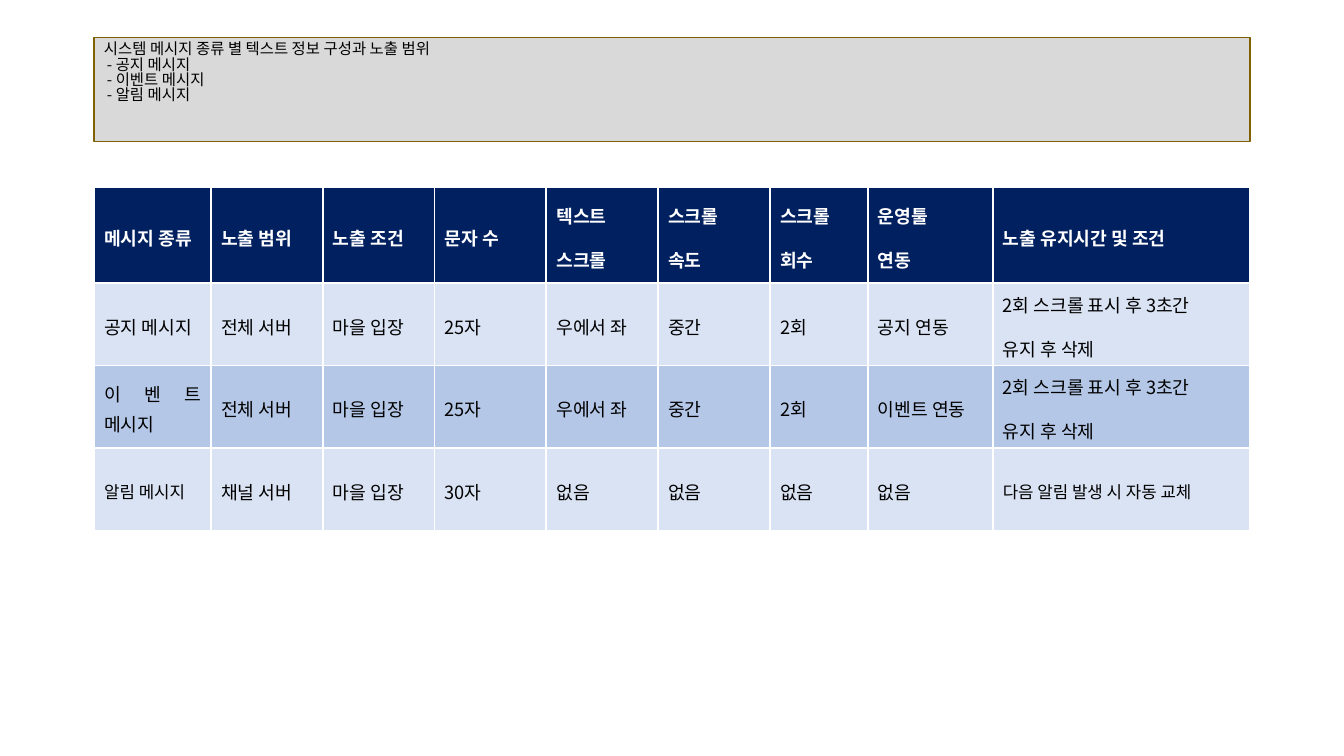
from lxml.etree import SubElement
from pptx import Presentation
from pptx.dml.color import RGBColor
from pptx.enum.shapes import MSO_SHAPE as Shape
from pptx.enum.text import MSO_ANCHOR as Anchor, PP_ALIGN as Align
from pptx.oxml.ns import qn
from pptx.util import Inches, Pt

FONT = "Noto Sans CJK KR"
LEFT, WIDTH = 0.07, 0.86

SUMMARY = [
    "시스템 메시지 종류 별 텍스트 정보 구성과 노출 범위",
    "- 공지 메시지",
    "- 이벤트 메시지",
    "- 알림 메시지",
]
HEADINGS = ["메시지 종류", "노출 범위", "노출 조건", "문자 수", "텍스트\n스크롤",
            "스크롤\n속도", "스크롤\n회수", "운영툴\n연동", "노출 유지시간 및 조건"]
HOLD_RULE = "2회 스크롤 표시 후 3초간\n유지 후 삭제"
MESSAGES = [
    ["공지 메시지", "전체 서버", "마을 입장", "25자", "우에서 좌", "중간", "2회", "공지 연동", HOLD_RULE],
    ["이벤트 메시지", "전체 서버", "마을 입장", "25자", "우에서 좌", "중간", "2회", "이벤트 연동", HOLD_RULE],
    ["알림 메시지", "채널 서버", "마을 입장", "30자", "없음", "없음", "없음", "없음", "다음 알림 발생 시 자동 교체"],
]
COLUMN_WEIGHTS = [1.16] + [1.11] * 5 + [0.97, 1.24, 2.55]
ROW_WEIGHTS = [0.95] + [0.82] * 3
ROW_FILLS = ["002060", "DAE3F3", "B4C7E7", "DAE3F3"]
SMALL_CELLS = {(3, 0), (3, 8)}


def colour(code):
    return RGBColor.from_string(code)


class SlideBuilder:
    def __init__(self, deck, font):
        self.deck = deck
        self.font = font
        self.slide = deck.slides.add_slide(deck.slide_layouts[6])

    def across(self, share):
        return round(self.deck.slide_width * share)

    def down(self, share):
        return round(self.deck.slide_height * share)

    def frame(self, left, top, width, height):
        return self.across(left), self.down(top), self.across(width), self.down(height)

    def add_span(self, para, text, size, ink, bold=False):
        span = para.add_run()
        span.text = text
        span.font.name = self.font
        span.font.size = Pt(size)
        span.font.bold = bold
        span.font.color.rgb = colour(ink)
        east_asian = SubElement(span.font._element, qn("a:ea"))
        east_asian.set("typeface", self.font)

    def paragraphs(self, text_frame, lines):
        for index, line in enumerate(lines):
            para = text_frame.paragraphs[0] if index == 0 else text_frame.add_paragraph()
            yield para, line

    def panel(self, place, lines, fill, outline):
        box = self.slide.shapes.add_shape(Shape.RECTANGLE, *self.frame(*place))
        box.shadow.inherit = False
        box.fill.solid()
        box.fill.fore_color.rgb = colour(fill)
        box.line.color.rgb = colour(outline)
        box.line.width = Pt(1)
        box.text_frame.word_wrap = True
        box.text_frame.vertical_anchor = Anchor.TOP
        for para, line in self.paragraphs(box.text_frame, lines):
            para.alignment = Align.LEFT
            para.line_spacing = 0.82
            if line.startswith("-"):
                para._p.get_or_add_pPr().set("marL", str(Inches(0.03)))
            self.add_span(para, line, 11, "000000")

    def borders(self, cell, ink, points):
        properties = cell._tc.get_or_add_tcPr()
        for side in ("a:lnL", "a:lnR", "a:lnT", "a:lnB"):
            edge = SubElement(properties, qn(side), w=str(Pt(points)))
            solid = SubElement(edge, qn("a:solidFill"))
            SubElement(solid, qn("a:srgbClr"), val=ink)

    def cell(self, cell, text, fill, size, ink, bold):
        self.borders(cell, "FFFFFF", 1.5)
        cell.fill.solid()
        cell.fill.fore_color.rgb = colour(fill)
        cell.vertical_anchor = Anchor.MIDDLE
        cell.margin_left = cell.margin_right = Inches(0.1)
        cell.margin_top = cell.margin_bottom = 0
        for para, line in self.paragraphs(cell.text_frame, text.split("\n")):
            para.alignment = Align.JUSTIFY
            para.line_spacing = 1.15
            para.space_after = Pt(10)
            self.add_span(para, line, size, ink, bold)

    def table(self, place, rows, column_weights, row_weights, fills, small_cells):
        left, top, width, height = self.frame(*place)
        table = self.slide.shapes.add_table(
            len(rows), len(column_weights), left, top, width, height).table
        table.first_row = table.horz_banding = False
        for column, weight in zip(table.columns, column_weights):
            column.width = round(width * weight / sum(column_weights))
        for row, weight in zip(table.rows, row_weights):
            row.height = round(height * weight / sum(row_weights))
        for r, texts in enumerate(rows):
            heading = r == 0
            ink = "FFFFFF" if heading else "000000"
            for c, text in enumerate(texts):
                size = 12 if (r, c) in small_cells else 13
                self.cell(table.cell(r, c), text, fills[r], size, ink, heading)


def main():
    deck = Presentation()
    deck.slide_width = Inches(13.33)
    deck.slide_height = Inches(7.5)
    page = SlideBuilder(deck, FONT)
    page.panel((LEFT, 0.05, WIDTH, 0.137), SUMMARY, "D9D9D9", "806000")
    page.table((LEFT, 0.248, WIDTH, 0.454), [HEADINGS] + MESSAGES,
               COLUMN_WEIGHTS, ROW_WEIGHTS, ROW_FILLS, SMALL_CELLS)
    deck.save("out.pptx")


if __name__ == "__main__":
    main()
